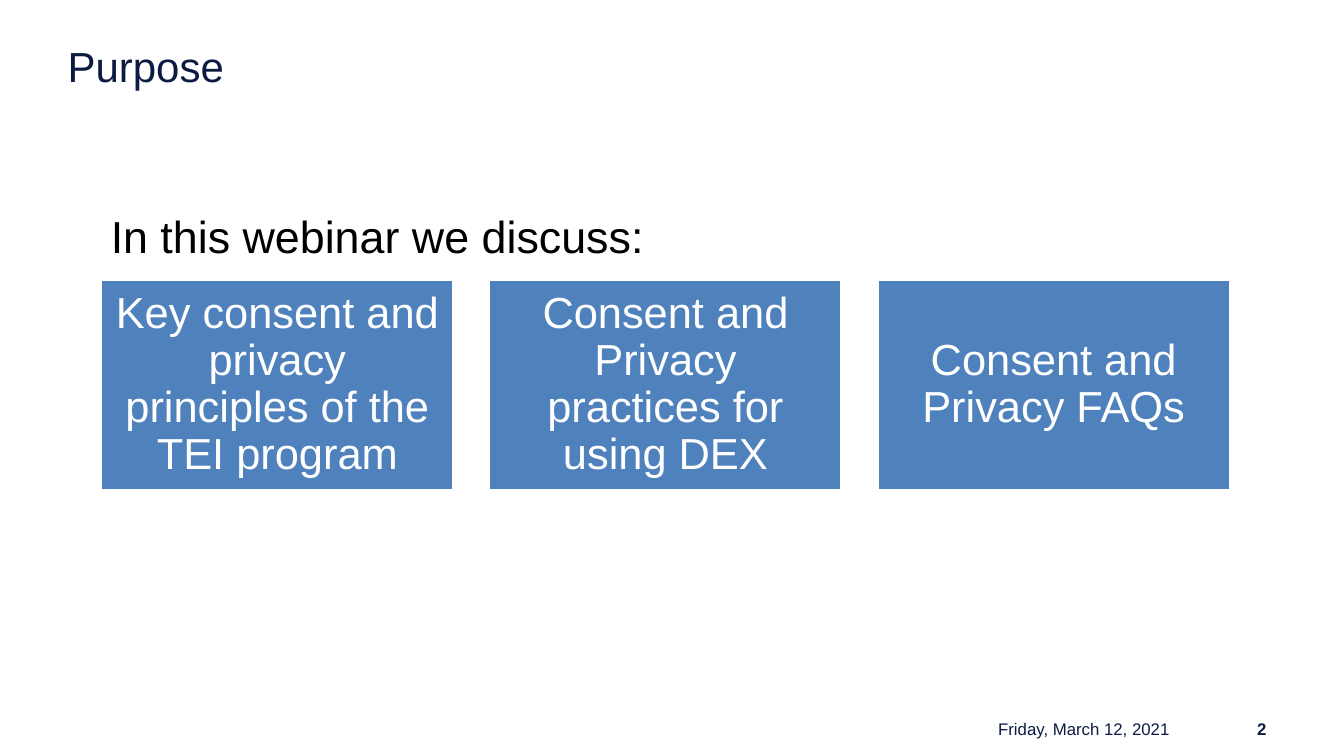
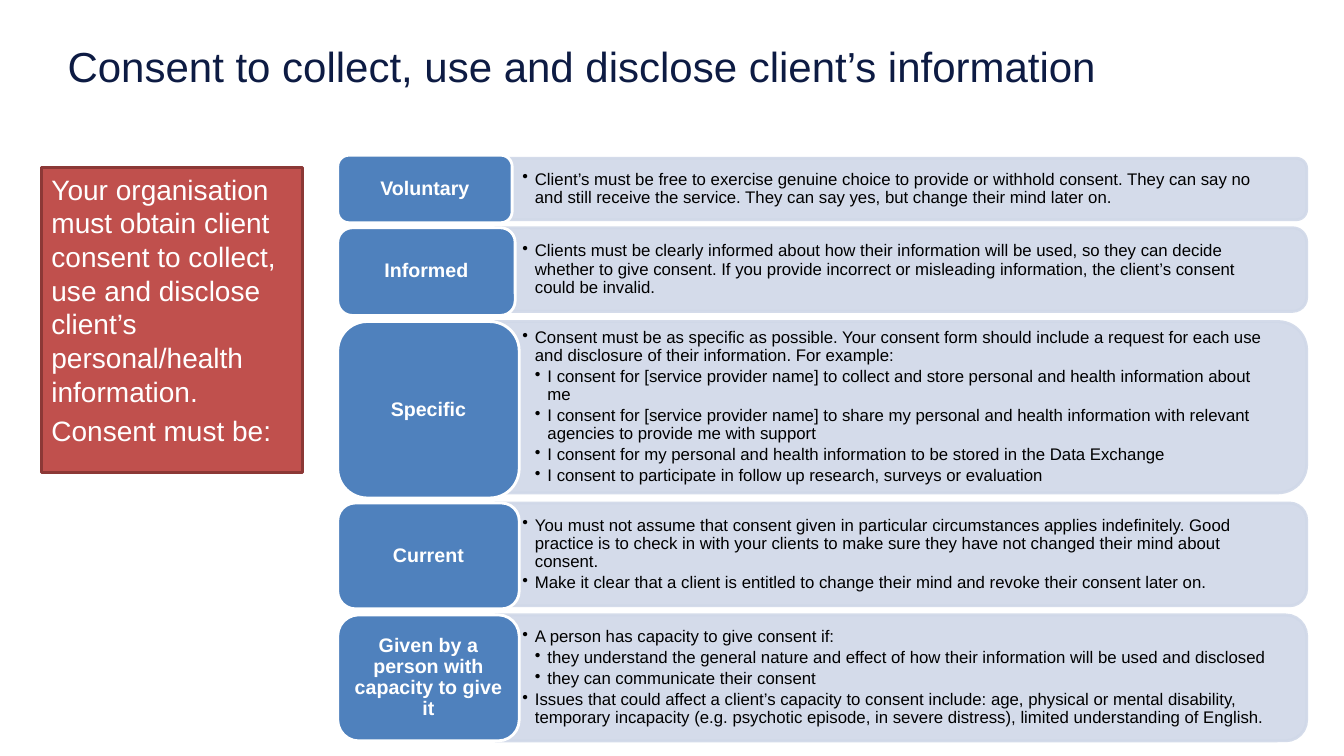
"""Build two slides on consent and privacy."""
from dataclasses import dataclass

from lxml.etree import SubElement
from pptx import Presentation
from pptx.dml.color import RGBColor as Rgb
from pptx.enum.shapes import MSO_SHAPE as Shape
from pptx.enum.text import MSO_ANCHOR as Anchor, MSO_AUTO_SIZE as AutoSize, PP_ALIGN as Align
from pptx.oxml.ns import qn
from pptx.util import Pt

EMU_PER_PX = 9144
TITLE_ONLY, TITLE_AND_BODY = 5, 1


@dataclass(frozen=True)
class Theme:
    """Hold the shared font, colours and type sizes."""
    face: str = "Arial"
    navy: str = "0D1B43"
    blue: str = "4F81BD"
    pale: str = "D0D8E8"
    red: str = "C0504D"
    dark_red: str = "8C3836"
    white: str = "FFFFFF"
    black: str = "000000"
    title: int = 30
    lead: int = 32
    card: int = 31
    callout: int = 20
    label: int = 14
    small: int = 12
    outline: int = 2
    panel_alpha: int = 90


def px(length):
    """Turn px into EMU."""
    return round(length * EMU_PER_PX)


def assign(target, values):
    """Set each named attribute of the target."""
    for name, value in values.items():
        setattr(target, name, value)


class SlideBuilder:
    """Keep the style and the current slide, and draw its elements."""

    def __init__(self, theme):
        """Start an empty widescreen deck."""
        self.theme = theme
        self.deck = Presentation()
        assign(self.deck, {"slide_width": px(1333), "slide_height": px(750)})
        self.page = None

    def start(self, layout, title):
        """Add a slide with its title."""
        self.page = self.deck.slides.add_slide(self.deck.slide_layouts[layout])
        heading = self.page.shapes.title
        self.place(heading, 67, 40, 1200, 66)
        self.set_text(heading, [title], self.theme.title, self.theme.navy, insets=(0, 0))

    def place(self, shape, left, top, width, height):
        """Move and size a shape."""
        box = {"left": left, "top": top, "width": width, "height": height}
        assign(shape, {name: px(length) for name, length in box.items()})

    def set_text(self, shape, lines, size, color, bold=False, align=Align.LEFT,
                 anchor=Anchor.TOP, insets=(10, 5), spacing=None, before=0):
        """Fill a shape with paragraphs and return them."""
        frame = shape.text_frame
        side, edge = map(px, insets)
        assign(frame, {"text": "\n".join(lines), "word_wrap": True,
                       "auto_size": AutoSize.NONE, "vertical_anchor": anchor,
                       "margin_left": side, "margin_right": side,
                       "margin_top": edge, "margin_bottom": edge})
        for index, para in enumerate(frame.paragraphs):
            assign(para, {"alignment": align, "line_spacing": spacing,
                          "space_before": Pt(before if index else 0)})
            for span in para.runs:
                assign(span.font, {"name": self.theme.face, "size": Pt(size), "bold": bold})
                span.font.color.rgb = Rgb.from_string(color)
        return frame.paragraphs

    def paint(self, shape, fill, line, alpha=None):
        """Give a shape its fill and outline."""
        shape.fill.solid()
        shape.fill.fore_color.rgb = Rgb.from_string(fill)
        shape.line.color.rgb = Rgb.from_string(line)
        shape.line.width = Pt(self.theme.outline)
        if alpha:
            for color in shape._element.spPr.iter(qn("a:srgbClr")):
                SubElement(color, qn("a:alpha"), val=str(alpha * 1000))

    def shape(self, kind, box, fill, line, alpha=None):
        """Add a painted preset shape."""
        shape = self.page.shapes.add_shape(kind, *map(px, box))
        shape.shadow.inherit = False
        self.paint(shape, fill, line, alpha)
        return shape

    def text(self, box, lines, size, color, **style):
        """Add a text box and return its paragraphs."""
        frame = self.page.shapes.add_textbox(*map(px, box))
        return self.set_text(frame, lines, size, color, **style)

    def block(self, kind, box, label, size, **style):
        """Add a blue shape with a centred white label."""
        shape = self.shape(kind, box, self.theme.blue, self.theme.white)
        self.set_text(shape, [label], size, self.theme.white, align=Align.CENTER,
                      anchor=Anchor.MIDDLE, spacing=0.9, **style)

    def callout(self, box, lines):
        """Turn the body placeholder into a red box."""
        body = self.page.placeholders[1]
        self.place(body, *box)
        self.paint(body, self.theme.red, self.theme.dark_red)
        for para in self.set_text(body, lines, self.theme.callout, self.theme.white, before=4):
            properties = para._p.get_or_add_pPr()
            properties.set("marL", "0")
            properties.set("indent", "0")
            SubElement(properties, qn("a:buNone"))

    def panel(self, top, height, items):
        """Add a pale panel, rounded on the right, with bulleted text."""
        left, width = 491, 805
        turned = (left + (width - height) / 2, top + (height - width) / 2, height, width)
        shape = self.shape(Shape.ROUND_2_SAME_RECTANGLE, turned, self.theme.pale,
                           self.theme.pale, self.theme.panel_alpha)
        shape.rotation = 90
        paras = self.text((left, top, 798, height), [line for _, line in items],
                          self.theme.small, self.theme.black, anchor=Anchor.MIDDLE,
                          insets=(27, 0), spacing=0.9, before=2)
        for para, (depth, _) in zip(paras, items):
            para.level = depth
            properties = para._p.get_or_add_pPr()
            properties.set("marL", str(px(12.5 * depth)))
            properties.set("indent", str(px(-12.5)))
            SubElement(properties, qn("a:buChar"), char="•")

    def footer(self, date, number):
        """Add the date and the slide number."""
        for left, width, label, bold in ((1157, 109, number, True), (859, 311, date, False)):
            self.text((left, 712, width, 23), [label], self.theme.small, self.theme.navy,
                      bold=bold, align=Align.RIGHT, anchor=Anchor.MIDDLE)


TOPICS = (
    "Key consent and privacy principles of the TEI program",
    "Consent and Privacy practices for using DEX",
    "Consent and Privacy FAQs",
)

CALLOUT = (
    "Your organisation must obtain client consent to collect, use and disclose client’s "
    "personal/health information.",
    "Consent must be:",
)

PRINCIPLES = (
    ("Voluntary", (154, 173, 67), (157, 61), (
        (1, "Client’s must be free to exercise genuine choice to provide or withhold consent. "
            "They can say no and still receive the service. They can say yes, but change "
            "their mind later on."),
    )),
    ("Informed", (226, 176, 87), (226, 83), (
        (1, "Clients must be clearly informed about how their information will be used, so "
            "they can decide whether to give consent. If you provide incorrect or misleading "
            "information, the client’s consent could be invalid."),
    )),
    ("Specific", (319, 180, 175), (319, 170), (
        (1, "Consent must be as specific as possible. Your consent form should include a "
            "request for each use and disclosure of their information. For example:"),
        (2, "I consent for [service provider name] to collect and store personal and health "
            "information about me"),
        (2, "I consent for [service provider name] to share my personal and health "
            "information with relevant agencies to provide me with support"),
        (2, "I consent for my personal and health information to be stored in the Data Exchange"),
        (2, "I consent to participate in follow up research, surveys or evaluation"),
    )),
    ("Current", (499, 180, 105), (499, 102), (
        (1, "You must not assume that consent given in particular circumstances applies "
            "indefinitely. Good practice is to check in with your clients to make sure they "
            "have not changed their mind about consent."),
        (1, "Make it clear that a client is entitled to change their mind and revoke their "
            "consent later on."),
    )),
    ("Given by a person with capacity to give it", (610, 180, 125), (610, 125), (
        (1, "A person has capacity to give consent if:"),
        (2, "they understand the general nature and effect of how their information will be "
            "used and disclosed"),
        (2, "they can communicate their consent"),
        (1, "Issues that could affect a client’s capacity to consent include: age, physical or "
            "mental disability, temporary incapacity (e.g. psychotic episode, in severe "
            "distress), limited understanding of English."),
    )),
)


def main():
    """Draw both slides and save the deck."""
    theme = Theme()
    builder = SlideBuilder(theme)

    builder.start(TITLE_ONLY, "Purpose")
    builder.footer("Friday, March 12, 2021", "2")
    for index, topic in enumerate(TOPICS):
        builder.block(Shape.RECTANGLE, (100 + 385 * index, 277, 350, 210), topic,
                      theme.card, insets=(13, 13))
    builder.text((100, 202, 711, 64), ["In this webinar we discuss:"], theme.lead, theme.black)

    builder.start(TITLE_AND_BODY, "Consent to collect, use and disclose client’s information")
    builder.callout((41, 166, 259, 303), CALLOUT)
    for label, (top, width, height), panel, items in PRINCIPLES:
        builder.panel(*panel, items)
        builder.block(Shape.ROUNDED_RECTANGLE, (335, top, width, height), label,
                      theme.label, bold=True, insets=(4, 3))

    builder.deck.save("out.pptx")


if __name__ == "__main__":
    main()
